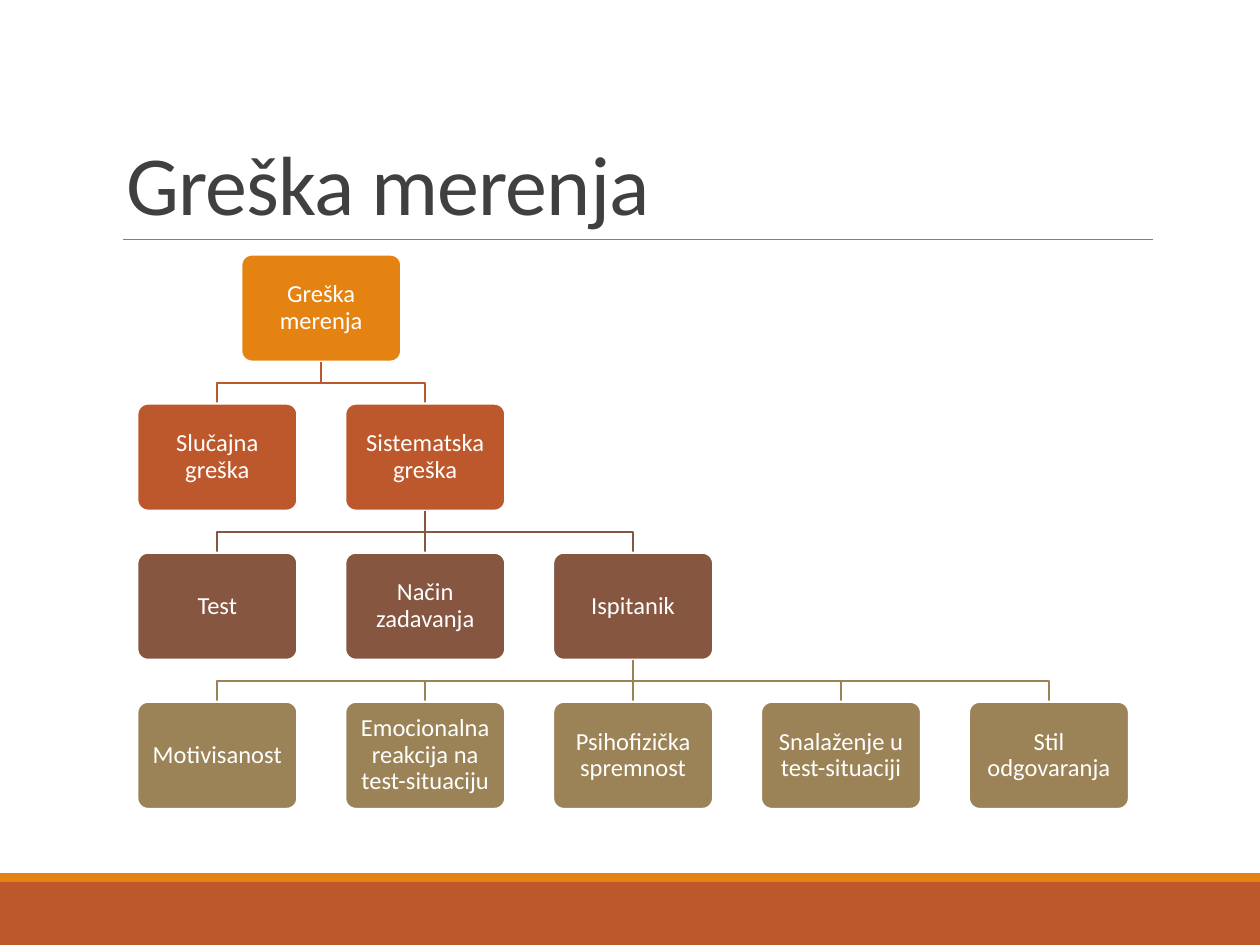
from lxml import etree
from pptx import Presentation
from pptx.dml.color import RGBColor
from pptx.enum.shapes import MSO_CONNECTOR, MSO_SHAPE
from pptx.enum.text import MSO_ANCHOR, MSO_AUTO_SIZE, PP_ALIGN
from pptx.oxml.ns import qn
from pptx.util import Inches, Pt

RECT = MSO_SHAPE.RECTANGLE
ROUND = MSO_SHAPE.ROUNDED_RECTANGLE
STRAIGHT = MSO_CONNECTOR.STRAIGHT
MIDDLE = MSO_ANCHOR.MIDDLE
BOTTOM = MSO_ANCHOR.BOTTOM
CENTER = PP_ALIGN.CENTER
LEFT = PP_ALIGN.LEFT
NO_FIT = MSO_AUTO_SIZE.NONE

WHITE = RGBColor(0xFF, 0xFF, 0xFF)
DARK = RGBColor(0x40, 0x40, 0x40)
GRAY = RGBColor(0x80, 0x80, 0x80)
ORANGE = RGBColor(0xE4, 0x83, 0x12)
RUST = RGBColor(0xBD, 0x58, 0x2C)
BROWN = RGBColor(0x86, 0x56, 0x40)
OLIVE = RGBColor(0x9B, 0x83, 0x57)

FONT = "Calibri"
BOX_W, BOX_H = 1.27, 0.85
START_X, START_Y = 1.09, 2.02
STEP_X, STEP_Y = 1.65, 3.55 / 3

# Each level: colour, column of its parent, {column: label}
LEVELS = [
    (ORANGE, None, {0.5: "Greška merenja"}),
    (RUST, 0.5, {0: "Slučajna greška", 1: "Sistematska greška"}),
    (BROWN, 1, {0: "Test", 1: "Način zadavanja", 2: "Ispitanik"}),
    (OLIVE, 2, {
        0: "Motivisanost",
        1: "Emocionalna reakcija na test-situaciju",
        2: "Psihofizička spremnost",
        3: "Snalaženje u test-situaciji",
        4: "Stil odgovaranja",
    }),
]


class Deck:
    """Draws the elements of the current slide in one style."""

    def __init__(self, slide):
        self.slide = slide
        self.shapes = slide.shapes

    def style(self, para, size, color, align, spacing):
        para.font.name = FONT
        para.font.size = Pt(size)
        para.font.color.rgb = color
        para.alignment = align
        para.line_spacing = spacing

    def title(self, text, left, top, width, height):
        shape = self.shapes.title
        shape.left, shape.top = Inches(left), Inches(top)
        shape.width, shape.height = Inches(width), Inches(height)
        frame = shape.text_frame
        frame.text = text
        frame.auto_size = NO_FIT
        frame.vertical_anchor = BOTTOM
        para = frame.paragraphs[0]
        self.style(para, 48, DARK, LEFT, 0.85)
        para.runs[0]._r.get_or_add_rPr().set("spc", "-50")

    def band(self, top, height, color):
        shape = self.shapes.add_shape(
            RECT, 0, Inches(top), Inches(10), Inches(height))
        shape.shadow.inherit = False
        shape.fill.solid()
        shape.fill.fore_color.rgb = color
        shape.line.fill.background()

    def line(self, x1, y1, x2, y2, color, weight):
        line = self.shapes.add_connector(
            STRAIGHT, Inches(x1), Inches(y1), Inches(x2), Inches(y2))
        line.line.color.rgb = color
        line.line.width = Pt(weight)
        etree.SubElement(line._element.spPr, qn("a:effectLst"))

    def branch(self, x1, y1, x2, y2, color):
        if x1 == x2:
            self.line(x1, y1, x2, y2, color, 1.25)
            return
        mid = (y1 + y2) / 2
        path = self.shapes.build_freeform(Inches(x1), Inches(y1))
        bends = [(x1, mid), (x2, mid), (x2, y2)]
        path.add_line_segments(
            [(Inches(x), Inches(y)) for x, y in bends], close=False)
        shape = path.convert_to_shape()
        shape.shadow.inherit = False
        shape.fill.background()
        shape.line.color.rgb = color
        shape.line.width = Pt(1.25)

    def box(self, text, left, top, color):
        shape = self.shapes.add_shape(
            ROUND, Inches(left), Inches(top), Inches(BOX_W), Inches(BOX_H))
        shape.adjustments[0] = 0.1
        shape.shadow.inherit = False
        shape.fill.solid()
        shape.fill.fore_color.rgb = color
        shape.line.color.rgb = WHITE
        shape.line.width = Pt(1.25)
        frame = shape.text_frame
        frame.text = text
        frame.word_wrap = True
        frame.vertical_anchor = MIDDLE
        frame.margin_left = frame.margin_right = Inches(0.08)
        frame.margin_top = frame.margin_bottom = Inches(0.08)
        self.style(frame.paragraphs[0], 14, WHITE, CENTER, 0.9)

    def tree(self, levels):
        for row, (color, parent, labels) in enumerate(levels):
            top = START_Y + row * STEP_Y
            for col, text in labels.items():
                left = START_X + col * STEP_X
                if parent is not None:
                    stem = START_X + parent * STEP_X + BOX_W / 2
                    self.branch(stem, top - STEP_Y + BOX_H,
                                left + BOX_W / 2, top, color)
                self.box(text, left, top, color)


def main():
    prs = Presentation()
    prs.slide_width, prs.slide_height = Inches(10), Inches(7.5)
    deck = Deck(prs.slides.add_slide(prs.slide_layouts[5]))
    deck.band(7, 0.5, RUST)
    deck.band(6.93, 0.07, ORANGE)
    deck.line(0.98, 1.9, 9.15, 1.9, GRAY, 0.5)
    deck.title("Greška merenja", 0.9, 0.31, 8.25, 1.59)
    deck.tree(LEVELS)
    prs.save("out.pptx")


if __name__ == "__main__":
    main()
